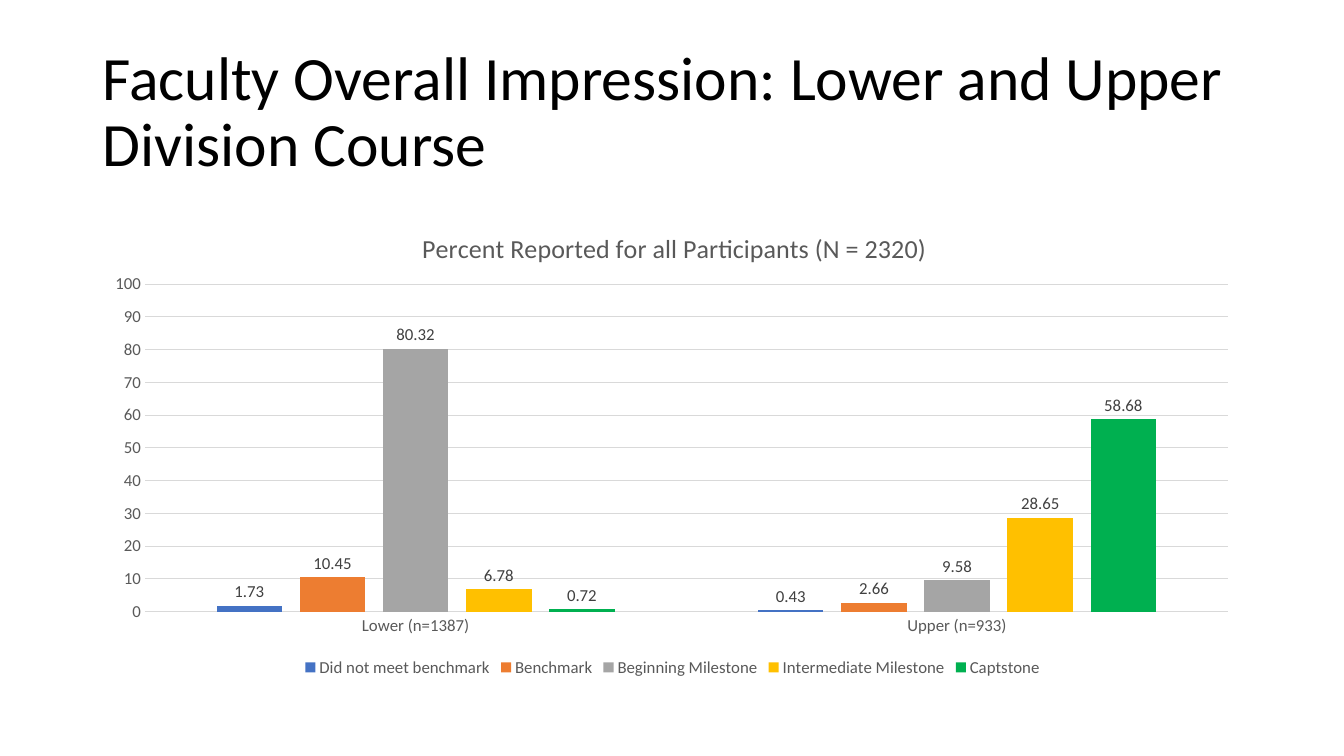
from pptx import Presentation
from pptx.chart.data import CategoryChartData as Data
from pptx.dml.color import RGBColor as Rgb
from pptx.enum.chart import XL_CHART_TYPE as Kind, XL_LABEL_POSITION as Spot
from pptx.enum.chart import XL_LEGEND_POSITION as Side, XL_TICK_MARK as Tick
from pptx.enum.text import MSO_ANCHOR as Anchor
from pptx.oxml import parse_xml
from pptx.oxml.ns import nsdecls, qn
from pptx.util import Inches, Pt

COLORS = {"black": "000000", "text": "595959", "label": "404040", "grid": "D9D9D9"}
GROUPS = ["Lower (n=1387)", "Upper (n=933)"]
LEVELS = [
    ("Did not meet benchmark", (1.73, 0.43), "4472C4"),
    ("Benchmark", (10.45, 2.66), "ED7D31"),
    ("Beginning Milestone", (80.32, 9.58), "A5A5A5"),
    ("Intermediate Milestone", (6.78, 28.65), "FFC000"),
    ("Captstone", (0.72, 58.68), "00B050"),
]


def place(part, index, **spots):
    """Fix a chart part at fractions of the chart's size."""
    for old in part.findall(qn("c:layout")):
        part.remove(old)
    modes = "".join(f'<c:{k}Mode val="edge"/>' for k in "xy")
    sizes = "".join(f'<c:{k} val="{v}"/>' for k, v in spots.items())
    target = '<c:layoutTarget val="inner"/>' if "w" in spots else ""
    part.insert(index, parse_xml(
        f'<c:layout {nsdecls("c")}><c:manualLayout>{target}{modes}{sizes}'
        '</c:manualLayout></c:layout>'))


class Deck:
    font = "Calibri"

    def __init__(self):
        self.prs = Presentation()
        self.prs.slide_width, self.prs.slide_height = Inches(13.33), Inches(7.5)
        self.slide = self.prs.slides.add_slide(self.prs.slide_layouts[6])

    def style(self, font, size, color):
        font.name, font.size, font.bold = self.font, Pt(size), False
        font.color.rgb = Rgb.from_string(COLORS[color])

    def rule(self, line):
        line.color.rgb = Rgb.from_string(COLORS["grid"])
        line.width = Pt(0.75)

    def text(self, words, box, size):
        frame = self.slide.shapes.add_textbox(*map(Inches, box)).text_frame
        frame.word_wrap = True
        frame.vertical_anchor = Anchor.MIDDLE
        para = frame.paragraphs[0]
        para.line_spacing = 0.9
        run = para.add_run()
        run.text = words
        self.style(run.font, size, "black")

    def columns(self, title, box):
        data = Data()
        data.categories = GROUPS
        for name, values, _ in LEVELS:
            data.add_series(name, values)
        chart = self.slide.shapes.add_chart(
            Kind.COLUMN_CLUSTERED, *map(Inches, box), data).chart
        self.style(chart.font, 12, "text")
        run = chart.chart_title.text_frame.paragraphs[0].add_run()
        run.text = title
        self.style(run.font, 18.6, "text")
        chart.chart_title.include_in_layout = False
        chart.has_legend = True
        chart.legend.position = Side.BOTTOM
        chart.legend.include_in_layout = False
        self.style(chart.legend.font, 12, "text")
        self.axes(chart)
        self.bars(chart.plots[0])
        space = chart.element
        place(space.find(".//" + qn("c:title")), 1, x=0.28, y=0.05)
        place(space.find(".//" + qn("c:plotArea")), 0, x=0.045, y=0.172, w=0.934, h=0.683)

    def axes(self, chart):
        cats, vals = chart.category_axis, chart.value_axis
        for axis in (cats, vals):
            axis.major_tick_mark = axis.minor_tick_mark = Tick.NONE
            self.style(axis.tick_labels.font, 12, "text")
        self.rule(cats.format.line)
        vals.format.line.fill.background()
        vals.minimum_scale, vals.maximum_scale, vals.major_unit = 0, 100, 10
        vals.has_major_gridlines = True
        self.rule(vals.major_gridlines.format.line)

    def bars(self, plot):
        plot.gap_width, plot.overlap = 219, -27
        plot.vary_by_categories = False
        for bar, (_, _, color) in zip(plot.series, LEVELS):
            bar.format.fill.solid()
            bar.format.fill.fore_color.rgb = Rgb.from_string(color)
            bar.invert_if_negative = False
            labels = bar.data_labels
            labels.show_value = True
            labels.position = Spot.OUTSIDE_END
            self.style(labels.font, 12, "label")


def main():
    deck = Deck()
    deck.text("Faculty Overall Impression: Lower and Upper Division Course",
              (0.92, 0.4, 11.5, 1.45), 44)
    deck.columns("Percent Reported for all Participants (N = 2320)",
                 (0.92, 2, 11.5, 4.76))
    deck.prs.save("out.pptx")


if __name__ == "__main__":
    main()
